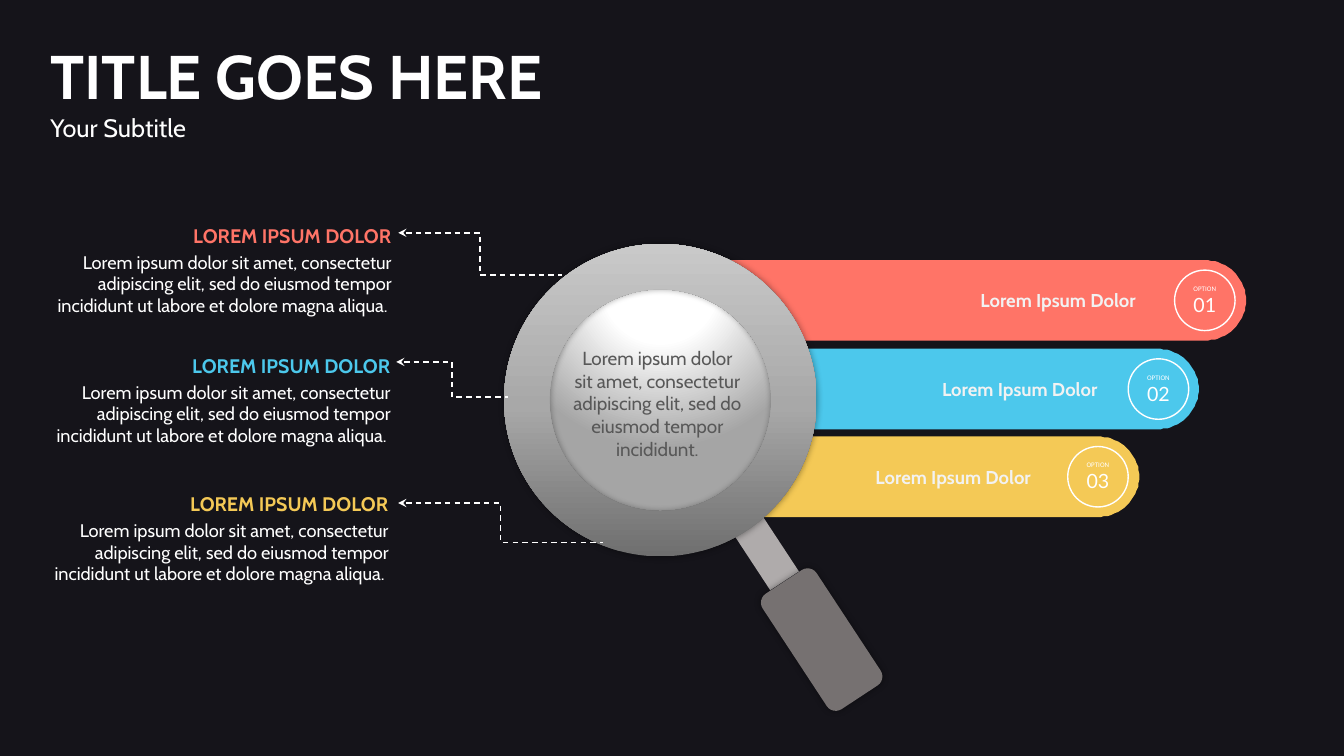
import math
from lxml import etree
from pptx import Presentation
from pptx import util as u
from pptx.dml.color import RGBColor
from pptx.enum import dml, shapes, text
from pptx.oxml import ns, parse_xml

PX = 9144  # EMU per px, 100 px to the inch
BACKGROUND = RGBColor(0x15, 0x14, 0x1A)
WHITE = RGBColor(0xFF, 0xFF, 0xFF)
PALE = RGBColor(0xF2, 0xF2, 0xF2)
CORAL = RGBColor(0xFF, 0x74, 0x67)
BLUE = RGBColor(0x4C, 0xC8, 0xEC)
YELLOW = RGBColor(0xF4, 0xC9, 0x56)
LENS_TEXT = RGBColor(0x58, 0x58, 0x58)
NECK = RGBColor(0xAF, 0xAB, 0xAB)
GRIP = RGBColor(0x76, 0x71, 0x71)
LEFT, CENTER, RIGHT = text.PP_ALIGN.LEFT, text.PP_ALIGN.CENTER, text.PP_ALIGN.RIGHT
SHADOW = ('<a:outerShdw %s blurRad="63500" dist="0" dir="0" algn="ctr" rotWithShape="0">'
          '<a:srgbClr val="000000"><a:alpha val="40000"/></a:srgbClr></a:outerShdw>')


def write(shape, lines, align=LEFT, inset=(10, 5), wrap=True,
          anchor=text.MSO_ANCHOR.TOP, gap=0):
    """Fill a shape with lines of (text, size, font, colour, bold)."""
    frame = shape.text_frame
    frame.auto_size = text.MSO_AUTO_SIZE.NONE
    frame.word_wrap = wrap
    frame.vertical_anchor = anchor
    frame.margin_left = frame.margin_right = inset[0] * PX
    frame.margin_top = frame.margin_bottom = inset[1] * PX
    for index, (words, size, font, colour, bold) in enumerate(lines):
        paragraph = frame.add_paragraph() if index else frame.paragraphs[0]
        paragraph.alignment = align
        paragraph.space_before = u.Pt(gap if index else 0)
        run = paragraph.add_run()
        run.text = words
        run.font.size, run.font.name, run.font.bold = u.Pt(size), font, bold
        run.font.color.rgb = colour


def style(shape, fill=None, gradient=None, shadow=False):
    """Set a plain or gradient fill, no outline, and an optional soft shadow."""
    shape.line.fill.background()
    shape.shadow.inherit = False
    if fill is not None:
        shape.fill.solid()
        shape.fill.fore_color.rgb = fill
    else:
        stops, direction = gradient
        marks = "".join(f'<a:gs pos="{at * 1000}"><a:srgbClr val="{colour}"/></a:gs>'
                        for at, colour in stops)
        shape.element.spPr.insert(2, parse_xml(
            f'<a:gradFill {ns.nsdecls("a")} rotWithShape="1">'
            f'<a:gsLst>{marks}</a:gsLst>{direction}</a:gradFill>'))
    if shadow:
        effects = shape.element.spPr.find(ns.qn("a:effectLst"))
        effects.append(parse_xml(SHADOW % ns.nsdecls("a")))


presentation = Presentation()
presentation.slide_width, presentation.slide_height = 1333 * PX, 750 * PX
slide = presentation.slides.add_slide(presentation.slide_layouts[5])
slide.background.fill.solid()
slide.background.fill.fore_color.rgb = BACKGROUND
canvas = slide.shapes

# Title and subtitle
title = canvas.title
title.left, title.top, title.width, title.height = 40 * PX, 33 * PX, 650 * PX, 114 * PX
write(title, [("TITLE GOES HERE", 44, "Cabin", WHITE, True),
              ("Your Subtitle", 18, "Cabin", WHITE, False)])

# Option bars: top, right end, label left, circle left, colour, edge under the rim
bars = [
    (258, 1236, 972, 1165, CORAL, [(770, 338), (767, 328), (744, 288), (711, 260), (708, 258)]),
    (346, 1189, 934, 1119, BLUE, [(777, 426), (780, 398), (777, 367), (770, 346)]),
    (433, 1130, 868, 1059, YELLOW, [(737, 513), (744, 505), (766, 470), (776, 438), (777, 433)]),
]
for number, (top, right, label_left, circle_left, colour, edge) in enumerate(bars, 1):
    cap = [(right - 42 + 42 * math.cos(angle), top + 40 + 40 * math.sin(angle))
           for angle in (math.radians(degree) for degree in range(-90, 91, 5))]
    outline = canvas.build_freeform(*edge[-1], scale=PX)
    outline.add_line_segments(cap + edge[:-1], close=True)
    style(outline.convert_to_shape(), fill=colour)

    label = canvas.add_textbox(label_left * PX, (top + 29) * PX, 155 * PX, 22 * PX)
    write(label, [("Lorem Ipsum Dolor", 13.3, "Cabin", PALE, True)],
          align=CENTER, inset=(0, 0), wrap=False)

    circle = canvas.add_shape(shapes.MSO_SHAPE.OVAL, circle_left * PX, (top + 10) * PX,
                              60 * PX, 60 * PX)
    circle.shadow.inherit = False
    circle.fill.background()
    circle.line.color.rgb = WHITE
    circle.line.width = u.Pt(1)
    write(circle, [("OPTION", 5, "Calibri", WHITE, False),
                   (f"{number:02d}", 14, "Lato", WHITE, False)],
          align=CENTER, inset=(0, 0), wrap=False, anchor=text.MSO_ANCHOR.MIDDLE)

# Descriptions on the left
for left, top, colour in [(20, 217, CORAL), (19, 346, BLUE), (17, 483, YELLOW)]:
    description = canvas.add_textbox(left * PX, top * PX, 378 * PX, 104 * PX)
    write(description, [
        ("LOREM IPSUM DOLOR", 14, "Cabin", colour, True),
        ("Lorem ipsum dolor sit amet, consectetur adipiscing elit, sed do eiusmod tempor "
         "incididunt ut labore et dolore magna aliqua. ", 13, "Cabin", WHITE, False),
    ], align=RIGHT, gap=2.6)

# Magnifier handle
neck = canvas.add_shape(shapes.MSO_SHAPE.RECTANGLE, 742 * PX, 512 * PX, 34 * PX, 70 * PX)
style(neck, fill=NECK)
grip = canvas.add_shape(shapes.MSO_SHAPE.ROUNDED_RECTANGLE, 783 * PX, 566 * PX,
                        64 * PX, 137 * PX)
style(grip, fill=GRIP, shadow=True)
neck.rotation = grip.rotation = 326.7

# Magnifier lens and rim
lens = canvas.add_shape(shapes.MSO_SHAPE.OVAL, 540 * PX, 283 * PX, 230 * PX, 230 * PX)
style(lens, gradient=([(0, "FFFFFF"), (35, "FFFFFF"), (100, "A5A5A5")],
                      '<a:path path="circle"><a:fillToRect l="50000" t="-80000" '
                      'r="50000" b="180000"/></a:path>'))
rim = canvas.add_shape(shapes.MSO_SHAPE.DONUT, 500 * PX, 242 * PX, 310 * PX, 310 * PX)
rim.adjustments[0] = 45 / 310
style(rim, gradient=([(0, "6F6F6F"), (48, "A8A8A8"), (100, "C9C9C9")],
                     '<a:lin ang="16200000" scaled="0"/>'), shadow=True)
message = canvas.add_textbox(557 * PX, 339 * PX, 190 * PX, 124 * PX)
write(message, [("Lorem ipsum dolor sit amet, consectetur adipiscing elit, sed do eiusmod "
                 "tempor incididunt.", 13.5, "Cabin", LENS_TEXT, False)], align=CENTER)

# Dashed arrows from the rim to the descriptions
for start_x, start_y, end_x, end_y in [(395, 231, 557, 273), (395, 499, 598, 538),
                                       (393, 359, 504, 394)]:
    arrow = canvas.add_connector(shapes.MSO_CONNECTOR.ELBOW, start_x * PX, start_y * PX,
                                 end_x * PX, end_y * PX)
    arrow.line.color.rgb = WHITE
    arrow.line.width = u.Pt(1)
    arrow.line.dash_style = dml.MSO_LINE.DASH
    properties = arrow.element.spPr
    etree.SubElement(properties.find(ns.qn("a:ln")), ns.qn("a:headEnd"), type="stealth")
    etree.SubElement(properties, ns.qn("a:effectLst"))

presentation.save("out.pptx")
